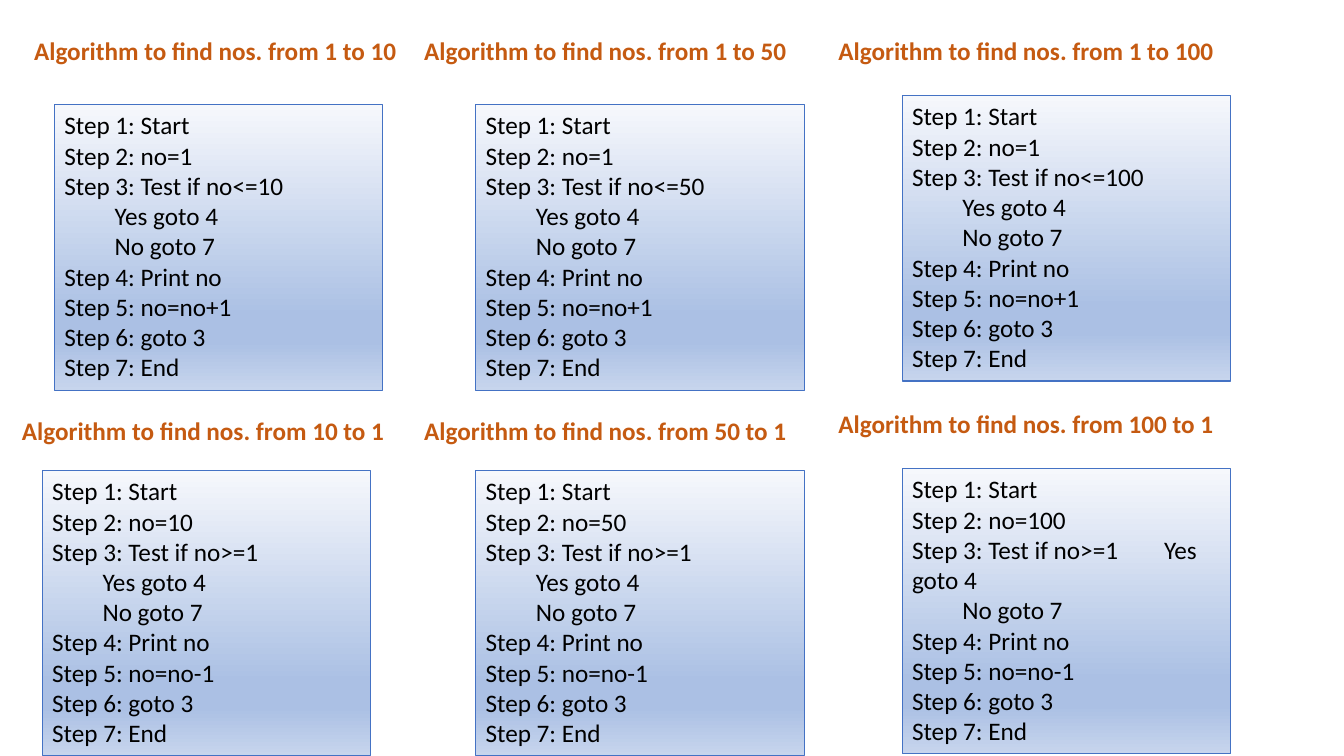
import copy
import pptx
import pptx.dml.color
import pptx.enum.shapes
import pptx.enum.text
import pptx.util

Pt = pptx.util.Pt

# start, end, title left, title top, title width, box indent from title, box top
ALGORITHMS = [
    (1, 10, 17.3, 21.6, 278.6, 21.6, 74.9),
    (1, 50, 295.9, 21.6, 278.6, 43.9, 74.9),
    (1, 100, 591.8, 21.6, 339.8, 52.6, 68.4),
    (10, 1, 8.6, 293, 278.6, 21.6, 336.2),
    (50, 1, 295.9, 293, 278.6, 43.9, 336.2),
    (100, 1, 591.8, 288, 314.6, 52.6, 334.8),
]
GRADIENT = [(0, "F6F8FC"), (0.74, "ABC0E4"), (0.83, "ABC0E4"), (1, "C7D5ED")]
BOX_W, BOX_H, TITLE_H = 234.7, 203.8, 29


def rgb(value):
    return pptx.dml.color.RGBColor.from_string(value)


def steps(start, end):
    test, change = ("<=", "+") if start < end else (">=", "-")
    branch = "\t" if start == 100 else "\n\t"
    return (
        f"Step 1: Start\nStep 2: no={start}\n"
        f"Step 3: Test if no{test}{end}{branch}Yes goto 4\n\tNo goto 7\n"
        f"Step 4: Print no\nStep 5: no=no{change}1\n"
        "Step 6: goto 3\nStep 7: End"
    ).split("\n")


def write(s, lines, color="000000", bold=False, size=18, font="Calibri"):
    tf = s.text_frame
    tf.word_wrap = True
    tf.auto_size = pptx.enum.text.MSO_AUTO_SIZE.SHAPE_TO_FIT_TEXT
    tf.vertical_anchor = pptx.enum.text.MSO_ANCHOR.TOP
    for i, line in enumerate(lines):
        p = tf.add_paragraph() if i else tf.paragraphs[0]
        p.alignment = pptx.enum.text.PP_ALIGN.LEFT
        r = p.add_run()
        r.text = line
        r.font.name, r.font.size, r.font.bold = font, Pt(size), bold
        r.font.color.rgb = rgb(color)


def fill_gradient(s):
    s.fill.gradient()
    s.fill.gradient_angle = 270
    stops = s._element.spPr.find(".//" + pptx.oxml.ns.qn("a:gsLst"))
    for _ in GRADIENT[2:]:
        stops.append(copy.deepcopy(stops[0]))
    for stop, (position, color) in zip(s.fill.gradient_stops, GRADIENT):
        stop.position = position
        stop.color.rgb = rgb(color)


def main():
    """Build the slide of six counting algorithms."""
    prs = pptx.Presentation()
    prs.slide_width, prs.slide_height = Pt(960), Pt(540)
    shapes = prs.slides.add_slide(prs.slide_layouts[6]).shapes
    for start, end, left, top, width, indent, box_top in ALGORITHMS:
        title = shapes.add_textbox(Pt(left), Pt(top), Pt(width), Pt(TITLE_H))
        write(title, [f"Algorithm to find nos. from {start} to {end}"],
              color="C55A11", bold=True)
        box = shapes.add_shape(pptx.enum.shapes.MSO_SHAPE.RECTANGLE,
                               Pt(left + indent), Pt(box_top), Pt(BOX_W), Pt(BOX_H))
        box.shadow.inherit = False
        fill_gradient(box)
        box.line.color.rgb = rgb("4472C4")
        box.line.width = Pt(0.75)
        write(box, steps(start, end))
    prs.save("out.pptx")


if __name__ == "__main__":
    main()
